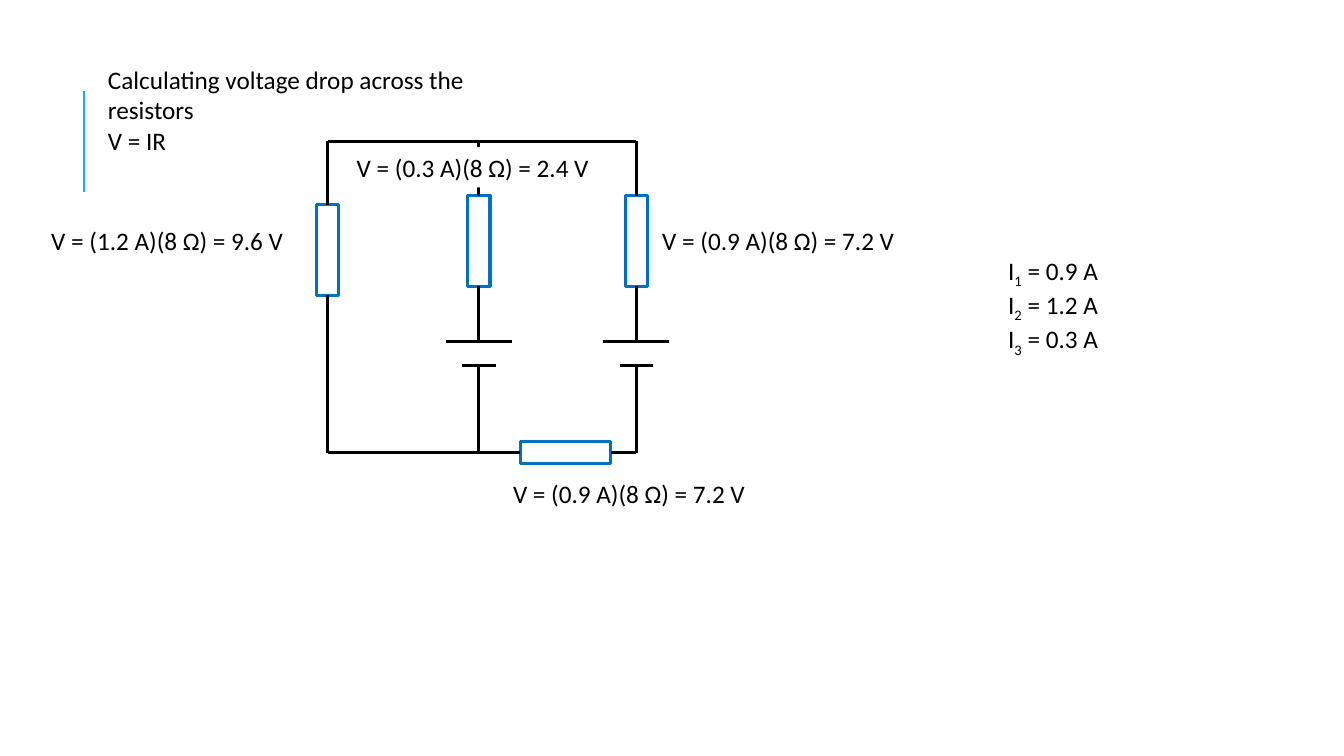
from lxml.etree import SubElement
from pptx import Presentation
from pptx.dml.color import RGBColor
from pptx.enum.shapes import MSO_CONNECTOR, MSO_SHAPE
from pptx.enum.text import MSO_ANCHOR, MSO_AUTO_SIZE, PP_ALIGN
from pptx.oxml.ns import qn
from pptx.util import Inches, Pt

BLACK, BLUE, ACCENT, WHITE = "000000", "0070C0", "1CADE4", "FFFFFF"


def color(value):
    """Turn a hex string into a colour."""
    return RGBColor.from_string(value)


def place(shape, x, y, w, h):
    """Set the position and size of a shape in inches."""
    shape.left, shape.top, shape.width, shape.height = map(Inches, (x, y, w, h))


def add_run(p, text, size=18, font="Calibri", fill=BLACK, baseline=0):
    """Add a formatted run to a paragraph."""
    r = p.add_run()
    r.text = text
    r.font.size = Pt(size)
    r.font.name = font
    r.font.color.rgb = color(fill)
    if baseline:
        r.font._element.set("baseline", str(baseline * 1000))


def write(shape, lines):
    """Fill a shape with left-aligned lines of (text, baseline) runs."""
    tf = shape.text_frame
    tf.word_wrap = True
    tf.auto_size = MSO_AUTO_SIZE.SHAPE_TO_FIT_TEXT
    tf.vertical_anchor = MSO_ANCHOR.TOP
    for i, runs in enumerate(lines):
        p = tf.add_paragraph() if i else tf.paragraphs[0]
        p.alignment = PP_ALIGN.LEFT
        for text, baseline in runs:
            add_run(p, text, baseline=baseline)


def add_line(s, x1, y1, x2, y2, stroke=BLACK, width=2.25):
    """Draw a straight line without a shadow."""
    line = s.shapes.add_connector(MSO_CONNECTOR.STRAIGHT, *map(Inches, (x1, y1, x2, y2)))
    line.line.color.rgb = color(stroke)
    line.line.width = Pt(width)
    SubElement(line._element.spPr, qn("a:effectLst"))


def add_box(s, x, y, w, h, fill=None, stroke=None):
    """Draw a rectangle with an optional fill and outline."""
    sp = s.shapes.add_shape(MSO_SHAPE.RECTANGLE, *map(Inches, (x, y, w, h)))
    sp.shadow.inherit = False
    if fill:
        sp.fill.solid()
        sp.fill.fore_color.rgb = color(fill)
    else:
        sp.fill.background()
    if stroke:
        sp.line.color.rgb = color(stroke)
        sp.line.width = Pt(2.25)
    else:
        sp.line.fill.background()
    return sp


def add_resistor(s, cx, cy, horizontal=False):
    """Draw a resistor around its centre."""
    w, h = (0.9, 0.22) if horizontal else (0.22, 0.9)
    add_box(s, cx - w / 2, cy - h / 2, w, h, stroke=BLUE)


def add_battery(s, cx, y):
    """Draw a cell whose long plate lies at height y."""
    for half, dy in ((0.325, 0), (0.165, 0.24)):
        add_line(s, cx - half, y + dy, cx + half, y + dy)


def add_heading(s, x, y, w, h):
    """Fill the title and draw the accent rule beside it."""
    title = s.shapes.title
    place(title, x, y, w, h)
    write(title, [[("Calculating voltage drop across the resistors", 0)], [("V = IR", 0)]])
    add_line(s, x - 0.14, y + 0.31, x - 0.14, y + 1.31, ACCENT, 1.5)


def add_circuit(s, x, y, w, h):
    """Draw the two-loop circuit inside its outer wire frame."""
    mid, right, bottom = x + 1.5, x + w, y + h
    plate, gap = y + 1.99, 0.24
    left_y, branch_y, series_x = y + 1.08, y + 0.99, x + 2.36
    add_resistor(s, x, left_y)
    add_resistor(s, series_x, bottom, horizontal=True)
    add_line(s, x, y, right, y)
    add_line(s, x, y, x, left_y - 0.45)
    add_line(s, x, left_y + 0.45, x, bottom)
    add_line(s, x, bottom, series_x - 0.45, bottom)
    add_line(s, series_x + 0.45, bottom, right, bottom)
    for cx in (mid, right):
        add_resistor(s, cx, branch_y)
        add_line(s, cx, y, cx, branch_y - 0.45)
        add_line(s, cx, branch_y + 0.45, cx, plate)
        add_battery(s, cx, plate)
        add_line(s, cx, plate + gap, cx, bottom)


def add_voltage(s, x, y, amps, volts, fill=None):
    """Label a resistor with its voltage drop."""
    label = add_box(s, x, y, 2.73, 0.4, fill=fill)
    write(label, [[(f"V = ({amps} A)(8 Ω) = {volts} V", 0)]])


def add_currents(s, x, y, w, h):
    """List the branch currents."""
    box = s.shapes.add_textbox(*map(Inches, (x, y, w, h)))
    write(box, [[("I", 0), (str(n), -25), (f" = {amps} A", 0)]
                for n, amps in enumerate(("0.9", "1.2", "0.3"), 1)])


def main():
    """Build and save the slide."""
    prs = Presentation()
    prs.slide_width, prs.slide_height = Inches(13.33), Inches(7.5)
    s = prs.slides.add_slide(prs.slide_layouts[5])
    add_heading(s, 0.97, 0.59, 4.62, 1.01)
    add_circuit(s, 3.25, 1.4, 3.06, 3.09)
    add_currents(s, 9.9, 2.48, 1.22, 1.01)
    add_voltage(s, 6.47, 2.19, "0.9", "7.2")
    add_voltage(s, 4.99, 4.7, "0.9", "7.2")
    add_voltage(s, 0.41, 2.19, "1.2", "9.6")
    add_voltage(s, 3.44, 1.46, "0.3", "2.4", fill=WHITE)
    prs.save("out.pptx")


if __name__ == "__main__":
    main()
